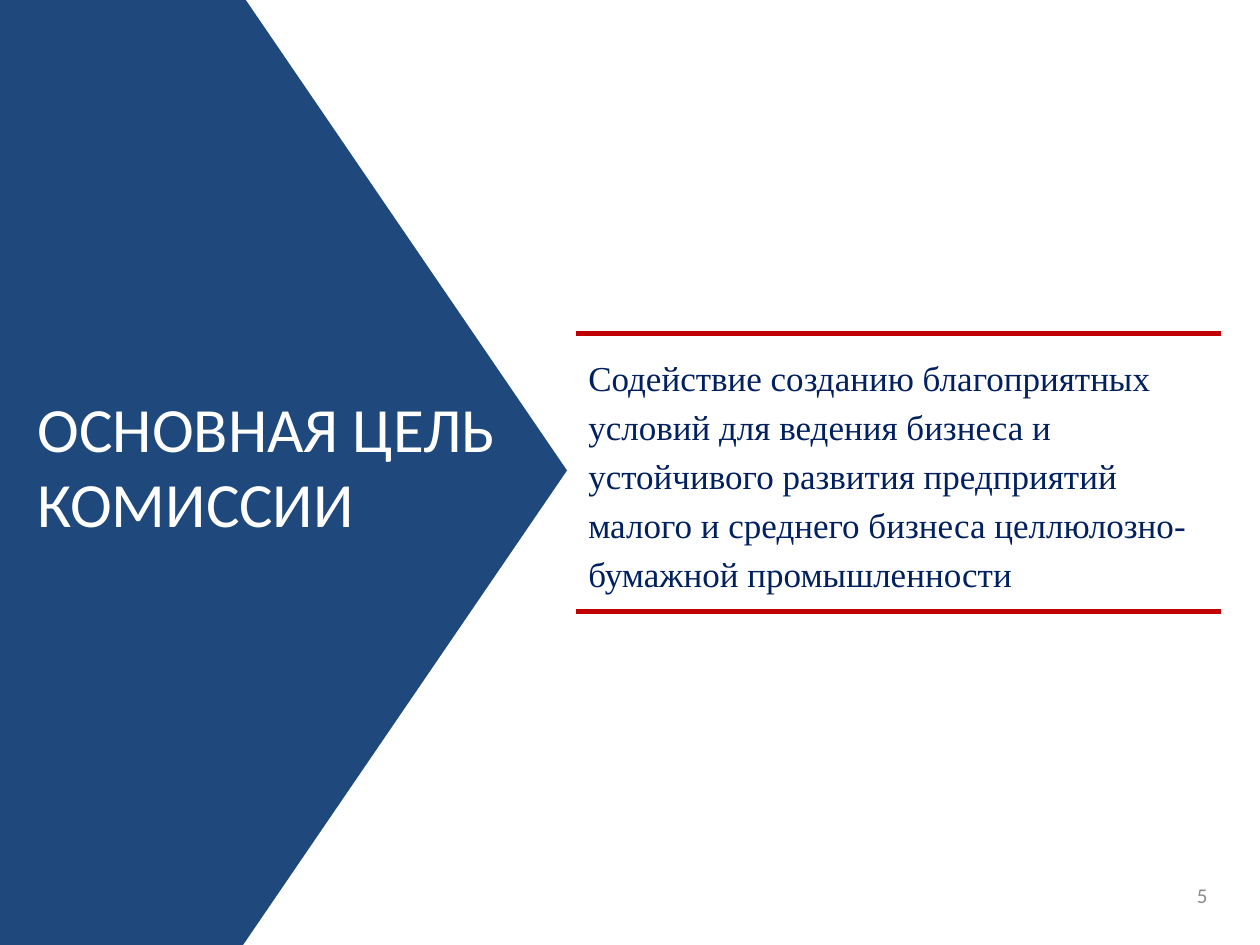
from lxml import etree
from pptx import Presentation
from pptx.dml.color import RGBColor
from pptx.enum.shapes import MSO_CONNECTOR, MSO_SHAPE
from pptx.enum.text import MSO_ANCHOR, PP_ALIGN
from pptx.oxml.ns import qn
from pptx.util import Cm, Pt

RECT, WEDGE = MSO_SHAPE.RECTANGLE, MSO_SHAPE.ISOSCELES_TRIANGLE
LINE = MSO_CONNECTOR.STRAIGHT
TOP, MID = MSO_ANCHOR.TOP, MSO_ANCHOR.MIDDLE
LEFT, RIGHT = PP_ALIGN.LEFT, PP_ALIGN.RIGHT

WIDE, HIGH = 25.4, 19.05
BLUE, NAVY, RED, WHITE, GREY = "1F497D", "002060", "C00000", "FFFFFF", "8C8C8C"

PANEL = [
    (WEDGE, (-1.4, 6.22, 19.13, 6.53), 90),
    (RECT, (0, 0, 4.9, HIGH), 0),
]
TEXTS = [
    ("ОСНОВНАЯ ЦЕЛЬ КОМИССИИ", (0.51, 7.72, 11.61, 3.33),
     dict(size=36, color=WHITE)),
    ("Содействие созданию благоприятных условий для ведения бизнеса "
     "и устойчивого развития предприятий малого и среднего бизнеса "
     "целлюлозно-бумажной промышленности", (11.61, 6.93, 12.7, 5.16),
     dict(size=20, color=NAVY, font="Times New Roman", pitch=28)),
    ("5", (16.69, 17.53, 7.9, 1.02),
     dict(size=12, color=GREY, align=RIGHT, anchor=MID)),
]
RULES = [6.73, 12.32]
START, END = 11.61, 24.61


def tint(code):
    return RGBColor.from_string(code)


def write(slide, text, box, size, color, font="Calibri", pitch=None,
          align=LEFT, anchor=TOP):
    frame = slide.shapes.add_textbox(*map(Cm, box)).text_frame
    frame.word_wrap = True
    frame.vertical_anchor = anchor
    para = frame.paragraphs[0]
    para.alignment = align
    if pitch:
        para.line_spacing = Pt(pitch)
    run = para.add_run()
    run.text = text
    run.font.name = font
    run.font.size = Pt(size)
    run.font.color.rgb = tint(color)


def block(slide, kind, box, turn):
    shape = slide.shapes.add_shape(kind, *map(Cm, box))
    shape.rotation = turn
    shape.shadow.inherit = False
    shape.fill.solid()
    shape.fill.fore_color.rgb = tint(BLUE)
    shape.line.fill.background()


def rule(slide, y):
    line = slide.shapes.add_connector(LINE, Cm(START), Cm(y), Cm(END), Cm(y))
    line.line.color.rgb = tint(RED)
    line.line.width = Pt(2.75)
    etree.SubElement(line._element.spPr, qn("a:effectLst"))


def main():
    deck = Presentation()
    deck.slide_width, deck.slide_height = Cm(WIDE), Cm(HIGH)
    slide = deck.slides.add_slide(deck.slide_layouts[6])
    for kind, box, turn in PANEL:
        block(slide, kind, box, turn)
    for text, box, style in TEXTS:
        write(slide, text, box, **style)
    for y in RULES:
        rule(slide, y)
    deck.save("out.pptx")


if __name__ == "__main__":
    main()
